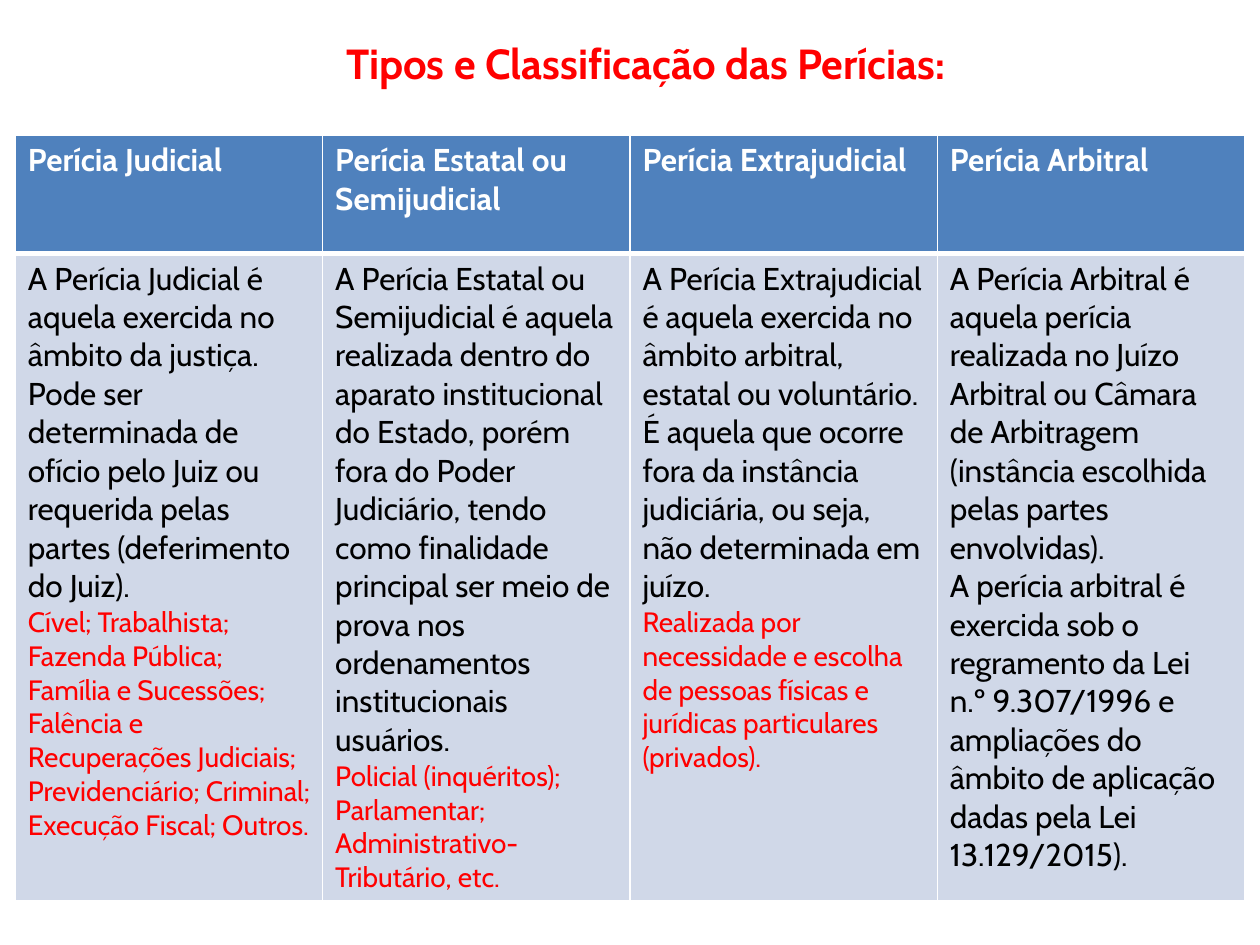
from lxml.etree import SubElement
from pptx import Presentation
from pptx.dml.color import RGBColor
from pptx.enum.text import MSO_ANCHOR, PP_ALIGN
from pptx.oxml.ns import qn
from pptx.util import Pt

FONT = "Cabin"
WHITE, BLACK, RED = "FFFFFF", "000000", "FF0000"
HEADER_BLUE, BODY_BLUE = "4F81BD", "D0D8E8"

COLUMNS = [
    ("Perícia Judicial", [
        ("A Perícia Judicial é aquela exercida no âmbito da justiça. Pode ser "
         "determinada de ofício pelo Juiz ou requerida pelas partes "
         "(deferimento do Juiz).", 18, BLACK),
        ("Cível; Trabalhista;", 16, RED),
        ("Fazenda Pública; Família e Sucessões; Falência e Recuperações "
         "Judiciais; Previdenciário; Criminal; Execução Fiscal; Outros.", 16, RED),
    ]),
    ("Perícia Estatal ou Semijudicial", [
        ("A Perícia Estatal ou Semijudicial é aquela realizada dentro do aparato "
         "institucional do Estado, porém fora do Poder Judiciário, tendo como "
         "finalidade principal ser meio de prova nos ordenamentos "
         "institucionais usuários.", 18, BLACK),
        ("Policial (inquéritos); Parlamentar; Administrativo-Tributário, etc.",
         16, RED),
    ]),
    ("Perícia Extrajudicial", [
        ("A Perícia Extrajudicial é aquela exercida no âmbito arbitral, estatal "
         "ou voluntário.", 18, BLACK),
        ("É aquela que ocorre fora da instância judiciária, ou seja, não "
         "determinada em juízo.", 18, BLACK),
        ("Realizada por necessidade e escolha de pessoas físicas e jurídicas "
         "particulares (privados).", 16, RED),
    ]),
    ("Perícia Arbitral", [
        ("A Perícia Arbitral é aquela perícia realizada no Juízo Arbitral ou "
         "Câmara de Arbitragem (instância escolhida pelas partes envolvidas).",
         18, BLACK),
        ("A perícia arbitral é exercida sob o regramento da Lei n.º 9.307/1996 e "
         "ampliações do âmbito de aplicação dadas pela Lei 13.129/2015).",
         18, BLACK),
    ]),
]


def color(value):
    return RGBColor.from_string(value)


def add_span(para, text, size, shade, bold=False):
    span = para.add_run()
    span.text = text
    span.font.name = FONT
    span.font.size = Pt(size)
    span.font.bold = bold
    span.font.color.rgb = color(shade)


def set_borders(cell, top, bottom):
    properties = cell._tc.get_or_add_tcPr()
    for side, width in (("L", 1), ("R", 1), ("T", top), ("B", bottom)):
        line = SubElement(properties, qn(f"a:ln{side}"), w=str(Pt(width)))
        fill = SubElement(line, qn("a:solidFill"))
        SubElement(fill, qn("a:srgbClr"), val=WHITE)


def fill_cell(cell, paragraphs, shade, top, bottom, bold=False):
    set_borders(cell, top, bottom)
    cell.fill.solid()
    cell.fill.fore_color.rgb = color(shade)
    frame = cell.text_frame
    for index, (text, size, text_shade) in enumerate(paragraphs):
        para = frame.add_paragraph() if index else frame.paragraphs[0]
        add_span(para, text, size, text_shade, bold)


def place_title(page, left, top, width, height):
    box = page.shapes.title
    box.left, box.top, box.width, box.height = map(Pt, (left, top, width, height))
    box.fill.solid()
    box.fill.fore_color.rgb = color(WHITE)
    frame = box.text_frame
    frame.word_wrap = False
    frame.vertical_anchor = MSO_ANCHOR.MIDDLE
    para = frame.paragraphs[0]
    para.alignment = PP_ALIGN.CENTER
    add_span(para, "Tipos e Classificação das Perícias:", 24, RED, bold=True)


def place_table(page, left, top, width, height, header_height):
    shape = page.shapes.add_table(
        2, len(COLUMNS), Pt(left), Pt(top), Pt(width), Pt(height))
    table = shape.table
    table.rows[0].height = Pt(header_height)
    table.rows[1].height = Pt(height - header_height)
    for index, (heading, paragraphs) in enumerate(COLUMNS):
        table.columns[index].width = Pt(width / len(COLUMNS))
        fill_cell(table.cell(0, index), [(heading, 18, WHITE)], HEADER_BLUE,
                  top=1, bottom=3, bold=True)
        fill_cell(table.cell(1, index), paragraphs, BODY_BLUE, top=3, bottom=1)


def main():
    deck = Presentation()
    deck.slide_width, deck.slide_height = Pt(720), Pt(540)
    page = deck.slides.add_slide(deck.slide_layouts[5])
    page.background.fill.solid()
    page.background.fill.fore_color.rgb = color(WHITE)
    place_table(page, 8.75, 77.25, 702.5, 433, header_height=67.5)
    place_title(page, 190, 18, 358, 36)
    deck.save("out.pptx")


if __name__ == "__main__":
    main()
